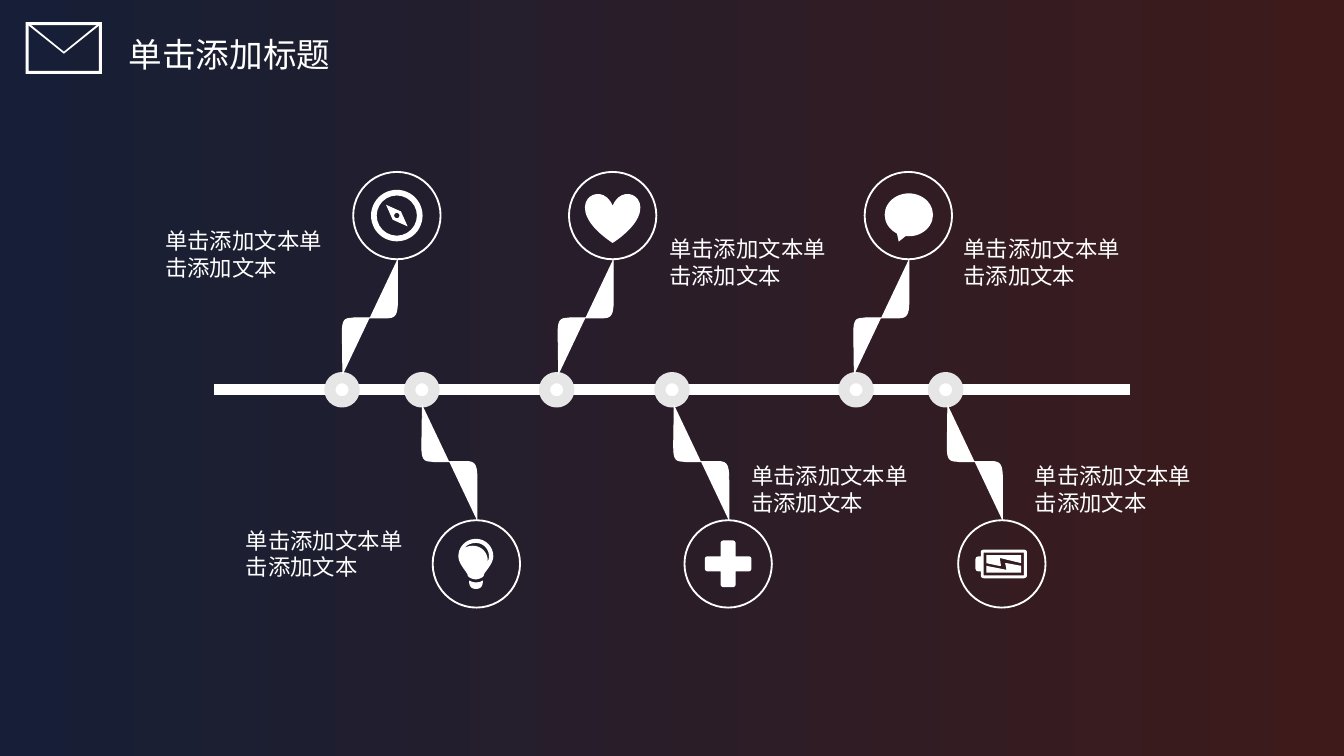
import dataclasses

import pptx
import pptx.dml.color
import pptx.enum.shapes
import pptx.enum.text
import pptx.oxml
import pptx.oxml.ns
import pptx.util

Pt = pptx.util.Pt
PRESET = pptx.enum.shapes.MSO_SHAPE
FONT = "Noto Sans CJK SC"
COLORS = {"white": "FFFFFF", "ring": "E7E6E6", "night": "161F37", "rust": "3E1B1A"}
AXIS_Y = 208.8
Contour = list[tuple[float, ...]]  # (x, y) is a corner; six numbers are a Bezier step


@dataclasses.dataclass
class Milestone:
    node_x: float
    ribbon_x: float
    side: int  # -1 above the axis, 1 below
    icon: str
    label_left: float
    label_top: float


MILESTONES = [
    Milestone(183.2, 183.4, -1, "compass", 81.4, 116.6),
    Milestone(226, 226, 1, "bulb", 124.6, 277.2),
    Milestone(298.2, 299, -1, "heart", 351.4, 121),
    Milestone(360, 360.9, 1, "plus", 395.3, 242.6),
    Milestone(458.6, 457.4, -1, "speech", 509, 121),
    Milestone(506.6, 507.5, 1, "battery", 547.2, 242.6),
]

# Ribbon from the axis outwards, y grows away from the axis
RIBBON: Contour = [
    (0.3, 0), (0, 24.8, 0, 17.3, 0, 22.3), (0, 31, 2.4, 29.5, 6.5, 30.2),
    (10.8, 30.2, 18.7, 30.2, 23.8, 30.2), (28.8, 30.2, 29.5, 32.4, 29.5, 40.3),
    (29.5, 45.4, 29.5, 58.3, 29.5, 61.6),
]

# Icon outlines, measured from the centre of their circle
PLUS_ARM = [(-4, -4), (-4, -11.3), (-3.6, -12.1), (-2.8, -12.5),
            (2.8, -12.5), (3.6, -12.1), (4, -11.3)]
PLUS = (PLUS_ARM + [(-y, x) for x, y in PLUS_ARM]
        + [(-x, -y) for x, y in PLUS_ARM] + [(y, -x) for x, y in PLUS_ARM])
NEEDLE = [(-5.8, -5.8), (2.2, -2.2), (5.8, 5.8), (-2.2, 2.2)]
NEEDLE_HOLE = [(1.4, 0), (1.4, 0.8, 0.8, 1.4, 0, 1.4), (-0.8, 1.4, -1.4, 0.8, -1.4, 0),
               (-1.4, -0.8, -0.8, -1.4, 0, -1.4), (0.8, -1.4, 1.4, -0.8, 1.4, 0)]
BULB_BASE = [(-3.6, 9), (-2.5, 9.6, -1.5, 9.9, -0.2, 9.9), (1.4, 9.9, 2.6, 9.5, 3.2, 9),
             (3.5, 9), (3.5, 11.9, 2.5, 13.4, -0.2, 13.4),
             (-2.9, 13.4, -3.9, 11.9, -3.9, 9)]
BULB_GLASS = [(-0.2, -13.4), (5, -13.4, 9.1, -9.2, 9.1, -4.1), (9.1, 0.4, 4, 4.5, 4, 6.2),
              (4, 6.4, 3.8, 7, 2.6, 7.5), (1.4, 8.1, 0.5, 8.3, -0.2, 8.3),
              (-1.2, 8.3, -2, 8.1, -3.2, 7.5), (-4.3, 7, -4.6, 6.3, -4.6, 6.2),
              (-4.6, 4.5, -9.6, 0.4, -9.6, -4.1), (-9.6, -9.2, -5.4, -13.4, -0.2, -13.4)]
BULB_GLINT = [(-1.8, -9.7), (2.5, -9.7, 6.1, -6.3, 6.1, -1.9), (6.1, -1.1),
              (6.5, -2.1, 6.8, -3.2, 6.8, -4.1), (6.8, -8, 3.7, -11.2, -0.2, -11.2),
              (-2.9, -11.2, -5.4, -10, -6.6, -8.2), (-5.4, -9.2, -3.8, -9.7, -1.8, -9.7)]
BATTERY_CASE = [(-12.6, -4), (-11.2, -4), (-11.2, -6.5), (-10.8, -7.3), (-9.7, -7.7),
                (11.9, -7.7), (13, -7.3), (13.5, -6.5), (13.5, 6.5), (13, 7.3), (11.9, 7.7),
                (-9.7, 7.7), (-10.8, 7.3), (-11.2, 6.5), (-11.2, 4), (-12.6, 4),
                (-13.7, 3.6), (-14.1, 2.6), (-14.1, -2.6), (-13.7, -3.6)]
BATTERY_WINDOW = [(-9.7, 6.1), (11.9, 6.1), (11.9, -6.1), (-9.7, -6.1)]
CHARGE_LOW = [(-8.3, 1.1), (2.5, 3.2), (1.8, -0.4), (2.5, -0.4),
              (10.4, 1.1), (10.4, 4.7), (-8.3, 4.7)]
CHARGE_HIGH = [(-0.4, 1.1), (-1.1, 1.1), (-8.3, -0.4), (-8.3, -4.7),
               (10.4, -4.7), (10.4, -0.4), (-1.1, -3.2)]
ICON_OUTLINES: dict[str, list[list[Contour]]] = {
    "compass": [[NEEDLE, NEEDLE_HOLE]],
    "bulb": [[BULB_BASE], [BULB_GLASS, BULB_GLINT]],
    "plus": [[PLUS]],
    "battery": [[CHARGE_LOW], [BATTERY_CASE, BATTERY_WINDOW], [CHARGE_HIGH]],
}
# Preset, centre offset and size
ICON_PRESETS = {
    "compass": (PRESET.DONUT, 0, 0, 27.6, 27.6),
    "heart": (PRESET.HEART, 0, 1.4, 29.5, 26.6),
    "speech": (PRESET.OVAL_CALLOUT, 0.3, -0.4, 25.9, 23),
}


def rgb(name: str) -> pptx.dml.color.RGBColor:
    return pptx.dml.color.RGBColor.from_string(COLORS[name])


def paint(shape, fill: str | None = "white", line: str | None = None,
          weight: float = 0) -> None:
    shape.shadow.inherit = False
    if fill:
        shape.fill.solid()
        shape.fill.fore_color.rgb = rgb(fill)
    else:
        shape.fill.background()
    if line:
        shape.line.color.rgb = rgb(line)
        shape.line.width = Pt(weight)
    else:
        shape.line.fill.background()


def add_preset(slide, preset, x: float, y: float, width: float, height: float, **look):
    """Draw a preset shape centred on (x, y)."""
    shape = slide.shapes.add_shape(preset, Pt(x - width / 2), Pt(y - height / 2),
                                   Pt(width), Pt(height))
    paint(shape, **look)
    return shape


def flatten(contour: Contour, steps: int = 10) -> list[tuple[float, float]]:
    """Turn the Bezier steps of a contour into short straight ones."""
    points = [contour[0]]
    for step in contour[1:]:
        if len(step) == 2:
            points.append(step)
            continue
        knots = [points[-1], step[:2], step[2:4], step[4:]]
        for i in range(1, steps + 1):
            t = i / steps
            weights = ((1 - t) ** 3, 3 * t * (1 - t) ** 2, 3 * t * t * (1 - t), t ** 3)
            points.append(tuple(sum(w * k[axis] for w, k in zip(weights, knots))
                                for axis in (0, 1)))
    return points


def add_outline(slide, contours: list[Contour], x: float = 0, y: float = 0,
                flip: int = 1, close: bool = True, **look) -> None:
    """Draw contours as one freeform, in hundredths of a point."""
    paths = [[((x + px) * 100, (y + flip * py) * 100) for px, py in flatten(contour)]
             for contour in contours]
    builder = slide.shapes.build_freeform(*paths[0][0], scale=Pt(1) / 100)
    builder.add_line_segments(paths[0][1:], close=close)
    for points in paths[1:]:
        builder.move_to(*points[0])
        builder.add_line_segments(points[1:], close=close)
    paint(builder.convert_to_shape(), **look)


def add_text(slide, text: str, *, left: float, top: float, width: float, height: float,
             size: float, color: str = "white") -> None:
    frame = slide.shapes.add_textbox(Pt(left), Pt(top), Pt(width), Pt(height)).text_frame
    frame.word_wrap = True
    frame.auto_size = pptx.enum.text.MSO_AUTO_SIZE.NONE
    frame.margin_top, frame.margin_bottom = Pt(5), Pt(2)
    paragraph = frame.paragraphs[0]
    paragraph.line_spacing = Pt(round(size * 1.2, 1))
    run = paragraph.add_run()
    run.text = text
    run.font.size = Pt(size)
    run.font.name = FONT
    run.font.color.rgb = rgb(color)
    east_asian = pptx.oxml.parse_xml(
        f'<a:ea {pptx.oxml.ns.nsdecls("a")} typeface="{FONT}"/>')
    run.font._element.find(pptx.oxml.ns.qn("a:latin")).addnext(east_asian)


def add_header(slide) -> None:
    frame = [(13.7, 11.9), (54.6, 11.9), (54.6, 39.6), (13.7, 39.6)]
    window = [(15.3, 13.5), (15.3, 38), (53, 38), (53, 13.5)]
    flap = [(14.4, 13), (15.1, 12.2), (34.2, 27.7), (34.2, 28.8)]
    add_outline(slide, [frame, window])
    add_outline(slide, [flap])
    add_outline(slide, [[(68.4 - x, y) for x, y in flap]])
    add_text(slide, "单击添加标题", left=61.9, top=13, width=155.5, height=28.8, size=18)


def add_axis(slide) -> None:
    axis = slide.shapes.add_connector(pptx.enum.shapes.MSO_CONNECTOR.STRAIGHT,
                                      Pt(114.5), Pt(AXIS_Y), Pt(605.5), Pt(AXIS_Y))
    axis.line.color.rgb = rgb("white")
    axis.line.width = Pt(6)
    axis._element.spPr.append(
        pptx.oxml.parse_xml(f'<a:effectLst {pptx.oxml.ns.nsdecls("a")}/>'))


def add_milestone(slide, stone: Milestone) -> None:
    # Node and ribbon
    add_preset(slide, PRESET.OVAL, stone.node_x, AXIS_Y, 13, 13, line="ring", weight=6)
    add_outline(slide, [RIBBON], stone.ribbon_x, AXIS_Y + stone.side * 8.3,
                flip=stone.side, close=False, line="white", weight=0.5)
    # Circle with icon
    x, y = stone.ribbon_x + 29.2, AXIS_Y + stone.side * 93.3
    add_preset(slide, PRESET.OVAL, x, y, 46.8, 46.8, fill=None, line="white", weight=1)
    if stone.icon in ICON_PRESETS:
        preset, dx, dy, width, height = ICON_PRESETS[stone.icon]
        icon = add_preset(slide, preset, x + dx, y + dy, width, height)
        if preset == PRESET.DONUT:
            icon.adjustments[0] = 0.11
    for contours in ICON_OUTLINES.get(stone.icon, []):
        add_outline(slide, contours, x, y)
    # Label
    add_text(slide, "单击添加文本单击添加文本", left=stone.label_left, top=stone.label_top,
             width=102.2, height=36, size=12)


def main() -> None:
    deck = pptx.Presentation()
    deck.slide_width, deck.slide_height = Pt(720), Pt(405)
    slide = deck.slides.add_slide(deck.slide_layouts[6])
    # Background
    backdrop = slide.background.fill
    backdrop.gradient()
    backdrop.gradient_angle = 0
    for stop, name, position in zip(backdrop.gradient_stops, ("night", "rust"), (0, 1)):
        stop.color.rgb = rgb(name)
        stop.position = position
    add_header(slide)
    add_axis(slide)
    for stone in MILESTONES:
        add_milestone(slide, stone)
    deck.save("out.pptx")


if __name__ == "__main__":
    main()
